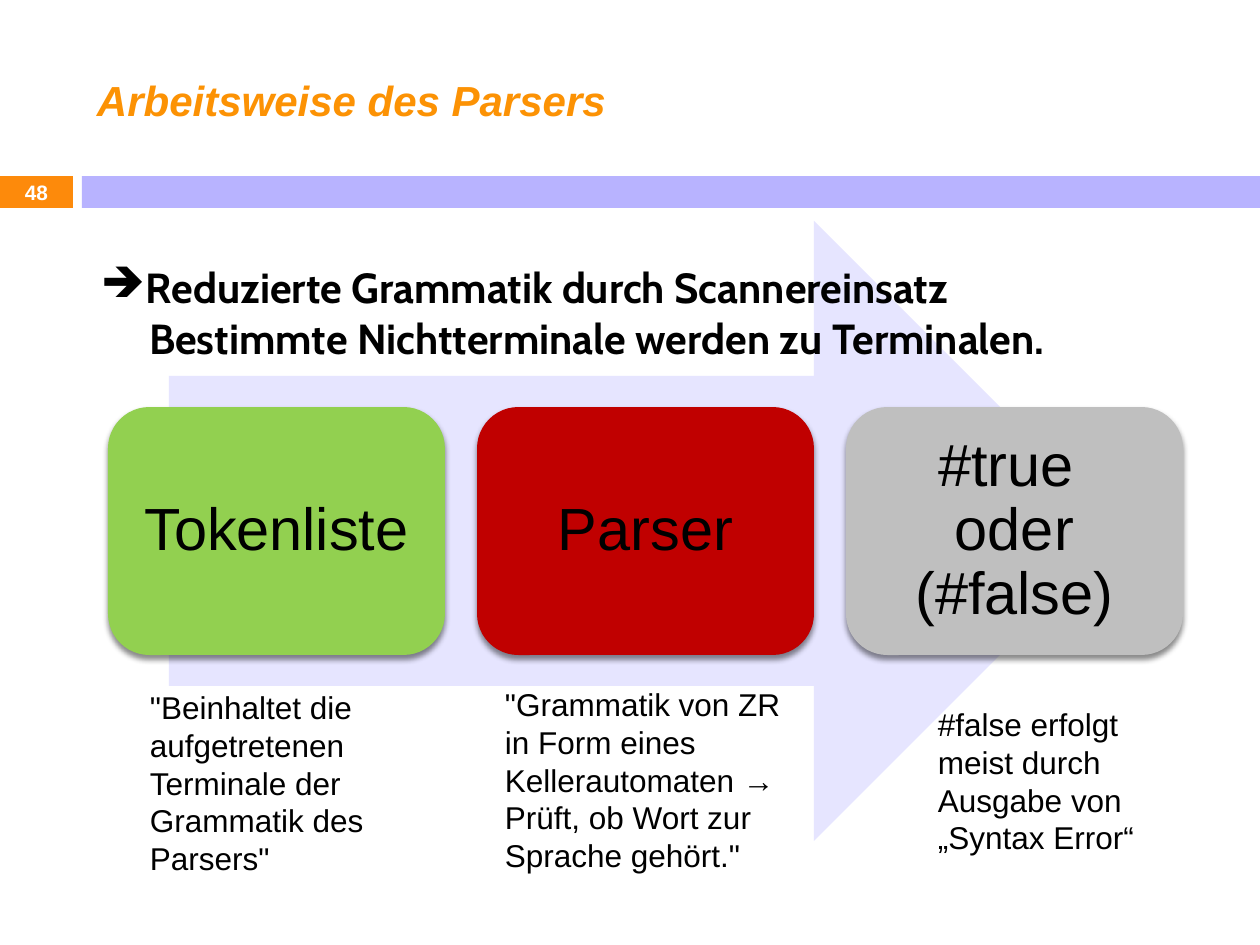
from dataclasses import dataclass

from lxml import etree
from pptx import Presentation
from pptx.dml.color import RGBColor
from pptx.enum.shapes import MSO_SHAPE
from pptx.enum.text import MSO_ANCHOR, PP_ALIGN
from pptx.oxml.ns import qn
from pptx.util import Emu, Pt

RECTANGLE = MSO_SHAPE.RECTANGLE
ROUNDED = MSO_SHAPE.ROUNDED_RECTANGLE
ARROW = MSO_SHAPE.RIGHT_ARROW
TOP, MIDDLE = MSO_ANCHOR.TOP, MSO_ANCHOR.MIDDLE
LEFT, CENTER = PP_ALIGN.LEFT, PP_ALIGN.CENTER
EMU_PER_PX = 914400 / 126


@dataclass(frozen=True)
class Theme:
    orange: str = "FD8A0B"
    title: str = "FC9204"
    lilac: str = "B8B3FF"
    pale_lilac: str = "E6E5FF"
    green: str = "92D050"
    red: str = "C00000"
    gray: str = "BFBFBF"
    black: str = "000000"
    white: str = "FFFFFF"
    body_font: str = "Arial"
    heading_font: str = "Cabin"
    heading_size: float = 24
    step_size: float = 34
    note_size: float = 18
    number_size: float = 11.9


THEME = Theme()


def px(value):
    return Emu(round(value * EMU_PER_PX))


def set_attributes(target, values):
    for name, value in values.items():
        setattr(target, name, value)


def write_text(shape, paragraphs, size, color=THEME.black, font=THEME.body_font,
               bold=False, italic=False, align=LEFT, anchor=TOP,
               margins=(13, 6), line_spacing=None):
    """Fill a shape with equally formatted paragraphs and return them."""
    frame = shape.text_frame
    horizontal, vertical = (px(margin) for margin in margins)
    set_attributes(frame, {
        "word_wrap": True, "vertical_anchor": anchor,
        "margin_left": horizontal, "margin_right": horizontal,
        "margin_top": vertical, "margin_bottom": vertical,
    })
    frame.text = "\n".join(paragraphs)
    for paragraph in frame.paragraphs:
        set_attributes(paragraph, {"alignment": align, "line_spacing": line_spacing})
        for run in paragraph.runs:
            set_attributes(run.font, {"name": font, "size": Pt(size),
                                      "bold": bold, "italic": italic})
            run.font.color.rgb = RGBColor.from_string(color)
    return frame.paragraphs


def add_text(slide, box, paragraphs, size, **text_format):
    shape = slide.shapes.add_textbox(*map(px, box))
    return write_text(shape, paragraphs, size, **text_format)


def add_block(slide, kind, box, color):
    shape = slide.shapes.add_shape(kind, *map(px, box))
    shape.shadow.inherit = False
    shape.fill.solid()
    shape.fill.fore_color.rgb = RGBColor.from_string(color)
    shape.line.fill.background()
    return shape


def add_soft_shadow(shape):
    effects = shape._element.spPr.find(qn("a:effectLst"))
    shadow = etree.SubElement(effects, qn("a:outerShdw"), {
        "blurRad": str(Pt(3)), "dist": str(Pt(2.4)),
        "dir": "5400000", "rotWithShape": "0"})
    color = etree.SubElement(shadow, qn("a:srgbClr"), val=THEME.black)
    etree.SubElement(color, qn("a:alpha"), val="45000")


def add_step(slide, box, label, color):
    shape = add_block(slide, ROUNDED, box, color)
    add_soft_shadow(shape)
    write_text(shape, [label], THEME.step_size, align=CENTER, anchor=MIDDLE,
               margins=(18, 18), line_spacing=0.9)


def indent(paragraph, left, bullet=None):
    """Indent a paragraph; a bullet hangs in the indent."""
    properties = paragraph._p.get_or_add_pPr()
    properties.set("marL", str(px(left)))
    properties.set("indent", str(px(-left if bullet else 0)))
    if bullet:
        etree.SubElement(properties, qn("a:buChar"), char=bullet)


def add_header(slide):
    add_block(slide, RECTANGLE, (0, 176, 73, 32), THEME.orange)
    add_block(slide, RECTANGLE, (82, 176, 1178, 32), THEME.lilac)
    add_text(slide, (84, 32, 1124, 136), ["Arbeitsweise des Parsers"],
             THEME.heading_size, color=THEME.title, bold=True, italic=True, anchor=MIDDLE)
    add_text(slide, (0, 175, 73, 34), ["48"], THEME.number_size,
             color=THEME.white, bold=True, align=CENTER, anchor=MIDDLE)


def add_process(slide):
    add_block(slide, ARROW, (169, 221, 955, 620), THEME.pale_lilac)
    steps = [("Tokenliste", THEME.green), ("Parser", THEME.red),
             ("#true \voder\v(#false)", THEME.gray)]
    for index, (label, color) in enumerate(steps):
        add_step(slide, (108 + index * 369, 407, 337, 248), label, color)


def add_notes_below(slide):
    notes = [
        ((137, 682, 325, 204),
         ['"Beinhaltet die aufgetretenen Terminale der Grammatik des Parsers"']),
        ((492, 679, 325, 204),
         ['"Grammatik von ZR in Form eines Kellerautomaten →',
          'Prüft, ob Wort zur Sprache gehört."']),
        ((925, 699, 237, 165),
         ["#false erfolgt meist durch Ausgabe von „Syntax Error“"]),
    ]
    for box, paragraphs in notes:
        add_text(slide, box, paragraphs, THEME.note_size)


def add_statement(slide):
    first, second = add_text(
        slide, (88, 256, 1092, 115),
        ["Reduzierte Grammatik durch Scannereinsatz",
         "Bestimmte Nichtterminale werden zu Terminalen."],
        THEME.heading_size, font=THEME.heading_font, bold=True)
    indent(first, 45, "➔")
    indent(second, 48)


def main():
    presentation = Presentation()
    set_attributes(presentation, {"slide_width": px(1260), "slide_height": px(945)})
    slide = presentation.slides.add_slide(presentation.slide_layouts[6])
    # Title, page number and bar
    add_header(slide)
    # Arrow with the three steps
    add_process(slide)
    # Explanations and key statement
    add_notes_below(slide)
    add_statement(slide)
    presentation.save("out.pptx")


if __name__ == "__main__":
    main()
